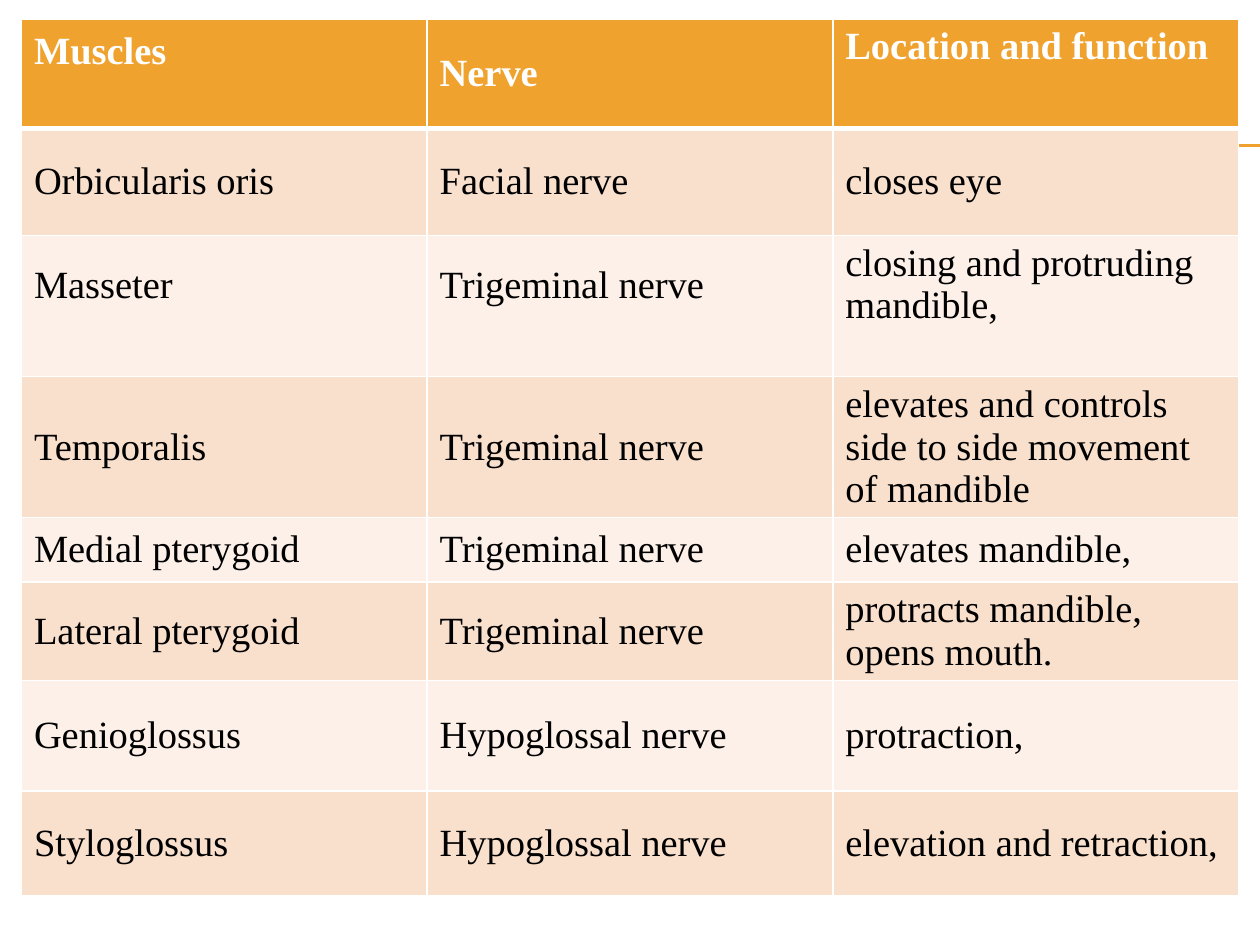
from lxml.etree import SubElement
from pptx import Presentation
from pptx.dml.color import RGBColor
from pptx.enum.shapes import MSO_CONNECTOR
from pptx.enum.text import MSO_ANCHOR
from pptx.oxml.ns import qn
from pptx.util import Inches, Pt

SLIDE_WIDTH, SLIDE_HEIGHT = 10, 7.5
ORANGE, WHITE, BLACK = "F0A22E", "FFFFFF", "000000"
BANDS = ("F9E0CD", "FCF0E8")
HEADER_FORMAT = {"name": "Times New Roman", "size": Pt(22), "bold": True}
BODY_FORMAT = {**HEADER_FORMAT, "bold": False}

ROW_HEIGHTS = (0.87, 0.85, 1.12, 1.12, 0.51, 0.78, 0.88, 0.83)
ROWS = (
    ("Muscles", "Nerve", "Location and function"),
    ("Orbicularis oris", "Facial nerve", "closes eye"),
    ("Masseter", "Trigeminal nerve", "closing and protruding mandible,"),
    ("Temporalis", "Trigeminal nerve",
     "elevates and controls side to side movement of mandible"),
    ("Medial pterygoid", "Trigeminal nerve", "elevates mandible,"),
    ("Lateral pterygoid", "Trigeminal nerve", "protracts mandible, opens mouth."),
    ("Genioglossus", "Hypoglossal nerve", "protraction,"),
    ("Styloglossus", "Hypoglossal nerve", "elevation and retraction,"),
)
TOP_CELLS = {(0, 2), (2, 2)}
# Cells whose text sits above the middle, with their bottom margins in inches
RAISED_CELLS = {(0, 0): 0.4, (2, 0): 0.38, (2, 1): 0.38}


def color(hex_value):
    return RGBColor.from_string(hex_value)


def set_borders(cell, widths):
    properties = cell._tc.get_or_add_tcPr()
    for position, (side, width) in enumerate(widths.items()):
        border = properties.makeelement(qn(f"a:{side}"), {"w": str(Pt(width))})
        fill = SubElement(border, qn("a:solidFill"))
        SubElement(fill, qn("a:srgbClr"), val=WHITE)
        properties.insert(position, border)


def add_rules(slide, left, right, tops):
    for top in tops:
        rule = slide.shapes.add_connector(
            MSO_CONNECTOR.STRAIGHT,
            Inches(left), Inches(top), Inches(right), Inches(top))
        rule.line.color.rgb = color(ORANGE)
        rule.line.width = Pt(0.75)
        SubElement(rule._element.spPr, qn("a:effectLst"))


def format_cell(cell, text, row, column):
    is_header = row == 0
    cell.fill.solid()
    cell.fill.fore_color.rgb = color(ORANGE if is_header else BANDS[(row - 1) % 2])
    cell.vertical_anchor = (
        MSO_ANCHOR.TOP if (row, column) in TOP_CELLS else MSO_ANCHOR.MIDDLE)
    cell.margin_bottom = Inches(RAISED_CELLS.get((row, column), 0.05))
    set_borders(cell, {"lnL": 1, "lnR": 1,
                       "lnT": 3 if row == 1 else 1,
                       "lnB": 3 if is_header else 1})
    run = cell.text_frame.paragraphs[0].add_run()
    run.text = text
    for attribute, value in (HEADER_FORMAT if is_header else BODY_FORMAT).items():
        setattr(run.font, attribute, value)
    run.font.color.rgb = color(WHITE if is_header else BLACK)


def add_muscle_table(slide, left, top, width):
    column_count = len(ROWS[0])
    table = slide.shapes.add_table(
        len(ROWS), column_count, Inches(left), Inches(top),
        Inches(width), Inches(sum(ROW_HEIGHTS))).table
    for column in table.columns:
        column.width = Inches(width / column_count)
    for row, (height, texts) in enumerate(zip(ROW_HEIGHTS, ROWS)):
        table.rows[row].height = Inches(height)
        for column, text in enumerate(texts):
            format_cell(table.cell(row, column), text, row, column)


def main():
    presentation = Presentation()
    presentation.slide_width = Inches(SLIDE_WIDTH)
    presentation.slide_height = Inches(SLIDE_HEIGHT)
    slide = presentation.slides.add_slide(presentation.slide_layouts[6])
    add_rules(slide, 0.56, SLIDE_WIDTH, (1.15, 1.16))
    margin = 0.17
    add_muscle_table(slide, margin, 0.15, SLIDE_WIDTH - 2 * margin)
    presentation.save("out.pptx")


if __name__ == "__main__":
    main()
